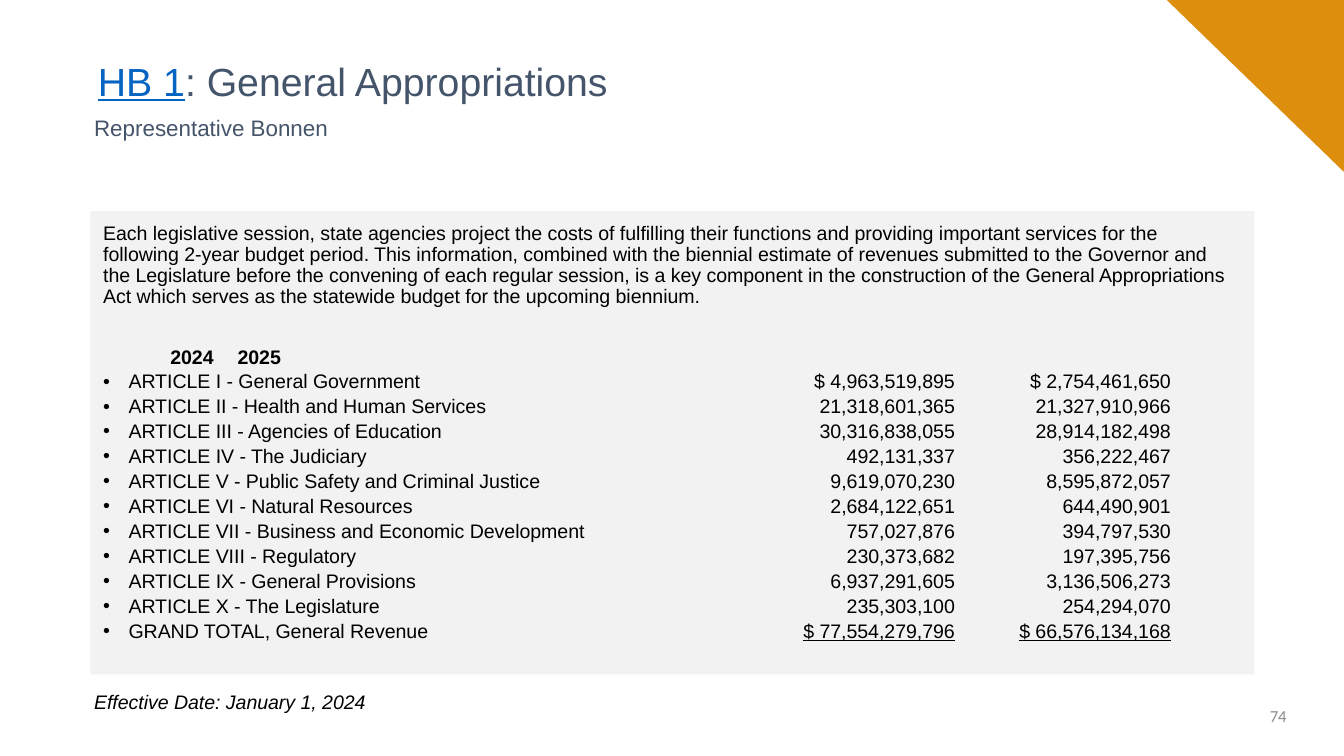
from lxml import etree
from pptx import Presentation
from pptx.dml.color import RGBColor
from pptx.enum.shapes import MSO_SHAPE
from pptx.enum.text import MSO_ANCHOR, MSO_AUTO_SIZE, PP_ALIGN
from pptx.oxml.ns import qn
from pptx.util import Cm, Pt

RECTANGLE, TRIANGLE = MSO_SHAPE.RECTANGLE, MSO_SHAPE.RIGHT_TRIANGLE
TOP, MIDDLE = MSO_ANCHOR.TOP, MSO_ANCHOR.MIDDLE
LEFT, RIGHT = PP_ALIGN.LEFT, PP_ALIGN.RIGHT
NO_AUTOFIT = MSO_AUTO_SIZE.NONE

COLORS = {"panel": "F2F2F2", "corner": "DD8E0D", "link": "0563C1",
          "heading": "44546A", "text": "000000", "number": "8C8C8C"}

BILL = "HB 1"
BILL_TITLE = ": General Appropriations"
SPONSOR = "Representative Bonnen"
EFFECTIVE_DATE = "Effective Date: January 1, 2024"
SLIDE_NUMBER = "74"
INTRODUCTION = (
    "Each legislative session, state agencies project the costs of fulfilling their functions "
    "and providing important services for the following 2-year budget period. This information, "
    "combined with the biennial estimate of revenues submitted to the Governor and the "
    "Legislature before the convening of each regular session, is a key component in the "
    "construction of the General Appropriations Act which serves as the statewide budget for "
    "the upcoming biennium."
)
YEARS = ("2024", "2025")
ARTICLES = [
    ("ARTICLE I - General Government", "$ 4,963,519,895", "$ 2,754,461,650"),
    ("ARTICLE II - Health and Human Services", "21,318,601,365", "21,327,910,966"),
    ("ARTICLE III - Agencies of Education", "30,316,838,055", "28,914,182,498"),
    ("ARTICLE IV - The Judiciary", "492,131,337", "356,222,467"),
    ("ARTICLE V - Public Safety and Criminal Justice", "9,619,070,230", "8,595,872,057"),
    ("ARTICLE VI - Natural Resources", "2,684,122,651", "644,490,901"),
    ("ARTICLE VII - Business and Economic Development", "757,027,876", "394,797,530"),
    ("ARTICLE VIII - Regulatory", "230,373,682", "197,395,756"),
    ("ARTICLE IX - General Provisions", "6,937,291,605", "3,136,506,273"),
    ("ARTICLE X - The Legislature", "235,303,100", "254,294,070"),
]
TOTAL = ("GRAND TOTAL, General Revenue", "$ 77,554,279,796", "$ 66,576,134,168")

YEAR_TABS = (15.04, 19.02)
AMOUNT_TABS = (16.1, 20.18)
BULLET_INDENT = 0.48
BODY_FONT = {"size": Pt(10.5)}


def place(shape, left, top, width, height):
    shape.left, shape.top, shape.width, shape.height = map(Cm, (left, top, width, height))


def prepare(shape, anchor=TOP, margins=(0.25, 0.13)):
    frame = shape.text_frame
    horizontal, vertical = map(Cm, margins)
    settings = {"word_wrap": True, "auto_size": NO_AUTOFIT, "vertical_anchor": anchor,
                "margin_left": horizontal, "margin_right": horizontal,
                "margin_top": vertical, "margin_bottom": vertical}
    for name, value in settings.items():
        setattr(frame, name, value)
    return frame


def add_run(paragraph, text, color="text", **font_format):
    run = paragraph.add_run()
    run.text = text
    run.font.color.rgb = RGBColor.from_string(COLORS[color])
    for name, value in {"name": "Arial", **font_format}.items():
        setattr(run.font, name, value)


def format_paragraph(paragraph, **changes):
    settings = {"alignment": LEFT, "line_spacing": 0.9,
                "space_before": Pt(0), "space_after": Pt(0), **changes}
    for name, value in settings.items():
        setattr(paragraph, name, value)


def set_list_style(paragraph, bullet=False, tabs=(), tab_alignment="r"):
    properties = paragraph._p.get_or_add_pPr()
    indent = Cm(BULLET_INDENT) if bullet else 0
    properties.set("marL", str(indent))
    properties.set("indent", str(-indent))
    if bullet:
        etree.SubElement(properties, qn("a:buFont"), typeface="Arial")
        etree.SubElement(properties, qn("a:buChar"), char="•")
    else:
        etree.SubElement(properties, qn("a:buNone"))
    if tabs:
        tab_list = etree.SubElement(properties, qn("a:tabLst"))
        for position in tabs:
            etree.SubElement(tab_list, qn("a:tab"), pos=str(Cm(position)), algn=tab_alignment)


def add_panel(slide, kind, color, box, rotation=0):
    shape = slide.shapes.add_shape(kind, *map(Cm, box))
    shape.fill.solid()
    shape.fill.fore_color.rgb = RGBColor.from_string(COLORS[color])
    shape.line.fill.background()
    shape.shadow.inherit = False
    shape.rotation = rotation
    return shape


def add_label(slide, text, box, margins=(0.18, 0.1), anchor=TOP, paragraph_format=None, **font):
    frame = prepare(slide.shapes.add_textbox(*map(Cm, box)), anchor, margins)
    format_paragraph(frame.paragraphs[0], **(paragraph_format or {}))
    add_run(frame.paragraphs[0], text, **font)


def fill_title(title):
    place(title, 1.6, 0.76, 22.2, 1.63)
    paragraph = prepare(title, MIDDLE).paragraphs[0]
    format_paragraph(paragraph)
    add_run(paragraph, BILL, "link", size=Pt(21), underline=True)
    add_run(paragraph, BILL_TITLE, "heading", size=Pt(21))


def fill_body(body):
    place(body, 1.7, 4.09, 21.89, 8.66)
    frame = prepare(body)
    introduction = frame.paragraphs[0]
    format_paragraph(introduction, space_after=Pt(21))
    set_list_style(introduction)
    add_run(introduction, INTRODUCTION, **BODY_FONT)

    header = frame.add_paragraph()
    format_paragraph(header, space_after=Pt(2))
    set_list_style(header, tabs=YEAR_TABS, tab_alignment="ctr")
    add_run(header, "\t" + "\t".join(YEARS), bold=True, **BODY_FONT)

    for row in ARTICLES + [TOTAL]:
        label, *amounts = row
        paragraph = frame.add_paragraph()
        format_paragraph(paragraph, space_after=Pt(2))
        set_list_style(paragraph, bullet=True, tabs=AMOUNT_TABS)
        add_run(paragraph, label + "\t", **BODY_FONT)
        add_run(paragraph, "\t".join(amounts), underline=row is TOTAL, **BODY_FONT)


def main():
    presentation = Presentation()
    presentation.slide_width, presentation.slide_height = Cm(25.4), Cm(14.29)
    slide = presentation.slides.add_slide(presentation.slide_layouts[1])
    title, body = slide.placeholders

    panel = add_panel(slide, RECTANGLE, "panel", (1.71, 3.99, 22, 8.76))
    title._element.addprevious(panel._element)
    fill_title(title)
    fill_body(body)
    add_label(slide, SLIDE_NUMBER, (18.85, 13.16, 5.72, 0.76), (0.25, 0.13), MIDDLE,
              {"alignment": RIGHT, "line_spacing": 1.0},
              color="number", name="Calibri", size=Pt(9))
    add_label(slide, EFFECTIVE_DATE, (1.6, 13.06, 21.89, 0.48),
              paragraph_format={"line_spacing": 0.7}, italic=True, **BODY_FONT)
    add_label(slide, SPONSOR, (1.6, 2.11, 19.48, 0.51), color="heading", size=Pt(12))
    add_panel(slide, TRIANGLE, "corner", (22.02, -0.03, 3.38, 3.28), 180)
    presentation.save("out.pptx")


if __name__ == "__main__":
    main()
